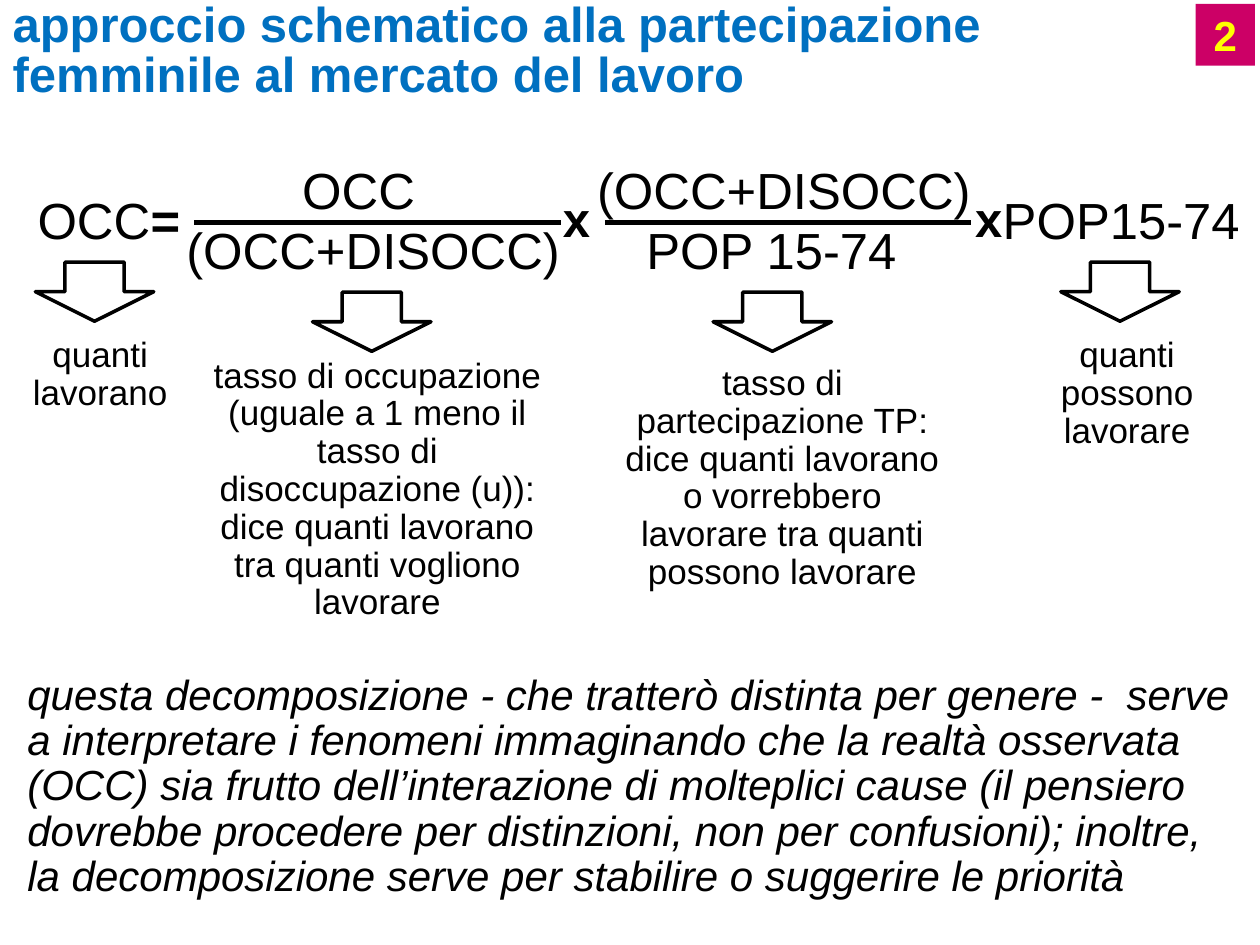
from pptx import Presentation
from pptx.dml.color import RGBColor
from pptx.enum.shapes import MSO_CONNECTOR, MSO_SHAPE
from pptx.enum.text import MSO_ANCHOR, MSO_AUTO_SIZE, PP_ALIGN
from pptx.oxml.ns import qn
from pptx.util import Pt
from lxml import etree

LEFT, CENTER = PP_ALIGN.LEFT, PP_ALIGN.CENTER
TOP, MIDDLE = MSO_ANCHOR.TOP, MSO_ANCHOR.MIDDLE
FIXED = MSO_AUTO_SIZE.NONE
RECT, ARROW = MSO_SHAPE.RECTANGLE, MSO_SHAPE.DOWN_ARROW
STRAIGHT = MSO_CONNECTOR.STRAIGHT

BLACK, BLUE, PINK, YELLOW = "000000", "0070C0", "CC0066", "FFFF00"


def color(code):
    return RGBColor.from_string(code)


class Board:
    face = "Arial"

    def __init__(self, slide):
        self.slide = slide
        self.shapes = slide.shapes

    def style(self, run, size, ink=BLACK, bold=False, italic=False):
        font = run.font
        font.name, font.size = self.face, Pt(size)
        font.bold, font.italic = bold, italic
        font.color.rgb = color(ink)

    def fill(self, shape, text, size, align=LEFT, gap=1.0, wrap=True,
             anchor=TOP, **look):
        """Set the text of a shape and format it."""
        frame = shape.text_frame
        frame.text = text
        frame.auto_size = FIXED
        frame.word_wrap = wrap
        frame.vertical_anchor = anchor
        for para in frame.paragraphs:
            para.alignment = align
            para.line_spacing = gap
            for run in para.runs:
                self.style(run, size, **look)

    def title(self, text, x, y, w, h):
        shape = self.shapes.title
        shape.left, shape.top = Pt(x), Pt(y)
        shape.width, shape.height = Pt(w), Pt(h)
        self.fill(shape, text, 28, ink=BLUE, bold=True, gap=0.85)

    def text(self, text, x, y, w, h, size, **look):
        box = self.shapes.add_textbox(Pt(x), Pt(y), Pt(w), Pt(h))
        self.fill(box, text, size, **look)
        return box

    def term(self, text, x, y, w):
        return self.text(text, x, y, w, 42.5, 29, wrap=False)

    def times(self, x, y):
        self.text("x", x, y, 31, 42.5, 28, bold=True, wrap=False)

    def note(self, text, x, y, w, h):
        self.text(text, x, y, w, h, 20, align=CENTER, gap=0.9)

    def bar(self, x, y, w):
        line = self.shapes.add_connector(STRAIGHT, Pt(x), Pt(y), Pt(x + w), Pt(y))
        line.line.color.rgb = color(BLACK)
        line.line.width = Pt(3)
        props = line._element.find(qn("p:spPr"))
        etree.SubElement(props, qn("a:effectLst"))

    def arrow(self, x, y):
        shape = self.shapes.add_shape(ARROW, Pt(x), Pt(y), Pt(67.7), Pt(33.8))
        shape.shadow.inherit = False
        shape.fill.background()
        shape.line.color.rgb = color(BLACK)
        shape.line.width = Pt(2)

    def badge(self, text, x, y, w, h):
        shape = self.shapes.add_shape(RECT, Pt(x), Pt(y), Pt(w), Pt(h))
        shape.shadow.inherit = False
        shape.fill.solid()
        shape.fill.fore_color.rgb = color(PINK)
        shape.line.fill.background()
        self.fill(shape, text, 24, ink=YELLOW, bold=True, align=CENTER,
                  wrap=False, anchor=MIDDLE)


def main():
    deck = Presentation()
    deck.slide_width, deck.slide_height = Pt(720), Pt(540)
    board = Board(deck.slides.add_slide(deck.slide_layouts[5]))

    board.title("approccio schematico alla partecipazione femminile "
                "al mercato del lavoro", 0, -2.2, 640.8, 64.8)
    board.badge("2", 683.3, 2.2, 33.8, 35.3)

    # Formula: numerators, middle row and denominators
    high, mid, low = 87.1, 104.4, 121.7
    total = board.term("OCC", 14.4, mid, 96.5)
    sign = total.text_frame.paragraphs[0].add_run()
    sign.text = "="
    board.style(sign, 29, bold=True)

    for text, x, y, w in (
        ("OCC", 165.6, high, 79.9),
        ("(OCC+DISOCC)", 99.4, low, 230.4),
        ("(OCC+DISOCC)", 334.1, high, 230.4),
        ("POP 15-74", 362.2, low, 159.1),
        ("POP15-74", 565.9, mid, 151.2),
    ):
        board.term(text, x, y, w)
    for x in (314.6, 550.1):
        board.times(x, mid)
    for x in (110.9, 345.6):
        board.bar(x, 127, 209.5)

    # Arrows hang lower under the fractions than under the plain terms
    for x, y in ((20.2, 149.8), (178.6, 167), (407.5, 167), (606.2, 149.8)):
        board.arrow(x, y)

    for note in (
        ("quanti\nlavorano", 2.9, 189.4, 108.7, 51.1),
        ("tasso di occupazione (uguale a 1 meno il tasso di disoccupazione "
         "(u)): dice quanti lavorano tra quanti vogliono lavorare",
         110.9, 200.9, 209.5, 159.8),
        ("tasso di partecipazione TP: dice quanti lavorano o vorrebbero "
         "lavorare tra quanti possono lavorare", 345.6, 205.2, 203, 138.2),
        ("quanti possono lavorare", 589.7, 189.4, 108.7, 72.7),
    ):
        board.note(*note)

    board.text("questa decomposizione - che tratterò distinta per genere -  serve "
               "a interpretare i fenomeni immaginando che la realtà osservata "
               "(OCC) sia frutto dell’interazione di molteplici cause (il "
               "pensiero dovrebbe procedere per distinzioni, non per "
               "confusioni); inoltre, la decomposizione serve per stabilire o "
               "suggerire le priorità",
               8.6, 381.6, 702.7, 138.2, 24, italic=True, gap=0.9)

    deck.save("out.pptx")


if __name__ == "__main__":
    main()
